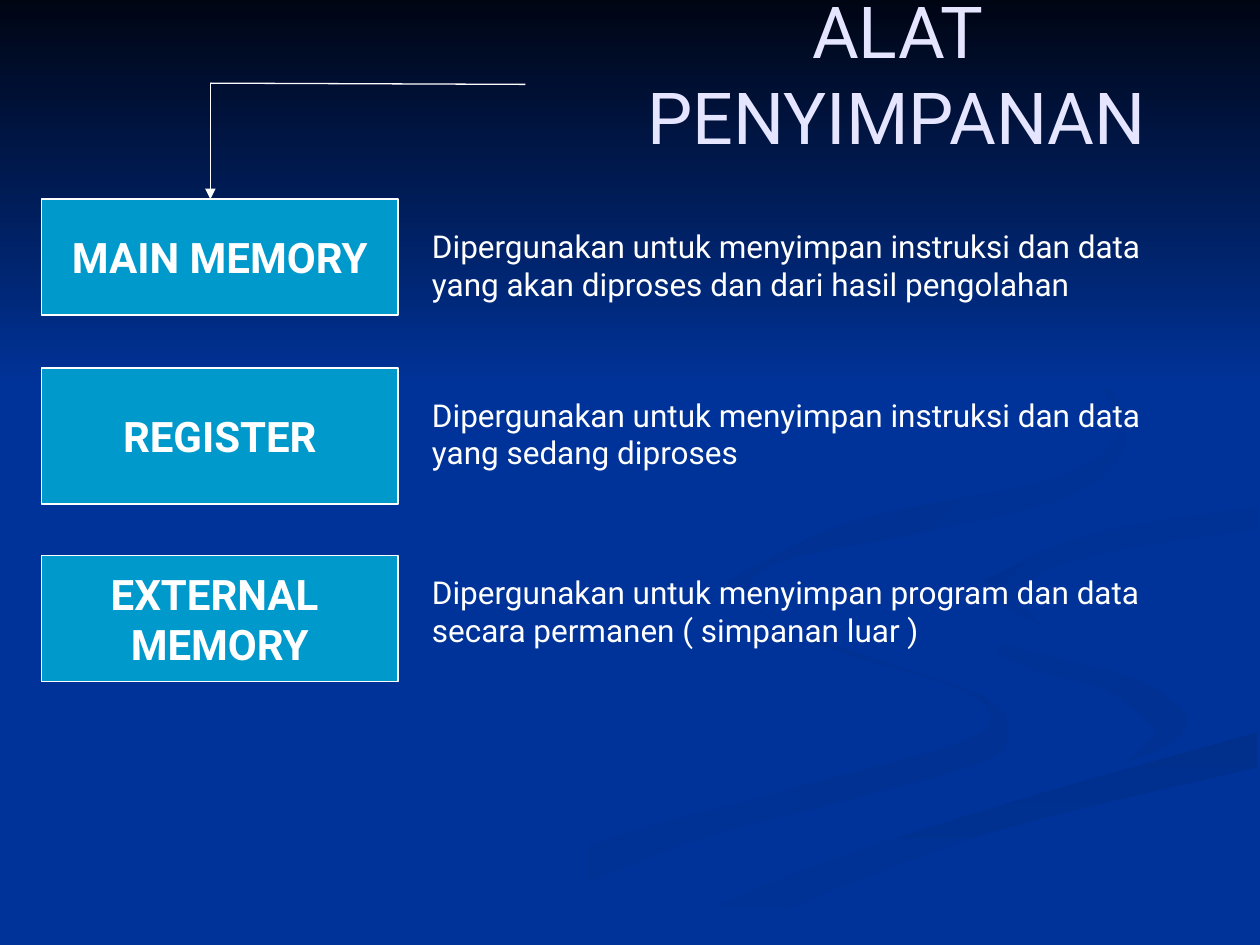
import pptx
import pptx.dml.color
import pptx.enum.shapes
import pptx.enum.text
import pptx.oxml
import pptx.oxml.ns
import pptx.util

Inches = pptx.util.Inches
ALIGN = pptx.enum.text.PP_ALIGN
ANCHOR = pptx.enum.text.MSO_ANCHOR

BLUE, WHITE, LAVENDER, CYAN, NIGHT = "003399", "FFFFFF", "E5E5FF", "0099CC", "000514"

CREST = [(7.24, 4.64), (7.58, 4.98), (8.3, 5.19), (9.05, 5.4), (9.43, 5.7)]
BANK = [(5.03, 7.49), (6.3, 6.93), (7.97, 6.38), (9.98, 5.81)]
COVE = [(9.98, 4.02), (8.65, 4.24), (7.81, 4.6)]

RIBBONS = [
    ([BLUE, "003193"], 0, [
        [(5.75, 4.59), (5.94, 4.85), (6.82, 5.19), (7.81, 5.53), (8, 5.81), (7.8, 6.05),
         (6.76, 6.34), (5.32, 6.74), (3.61, 7.49)],
        [(3, 7.49), (4.58, 6.74), (6.16, 6.29), (7.59, 5.9), (7.86, 5.66), (7.52, 5.43),
         (6.54, 5.13), (5.7, 4.72)]]),
    ([BLUE, "003193"], 45, [
        CREST + [(9.32, 5.89), (8.94, 6.05)],
        [(9.18, 5.81), (8.8, 5.49), (8.15, 5.3), (7.39, 4.94)]]),
    (["002F8C", BLUE], 90, [
        BANK, [(9.98, 6.09), (7.85, 6.61), (6.3, 7.19), (5.71, 7.49)]]),
    ([BLUE], 0, [
        CREST + [(9.02, 6.03), (7.43, 6.43), (5.73, 7.03), (4.77, 7.49)],
        BANK, [(9.98, 5.38), (9.04, 5.19), (8.04, 4.85), (7.81, 4.6)],
        COVE[::-1], [(9.98, 3.87), (8.08, 4.17), (7.42, 4.39), (7.24, 4.64)]]),
    (["003091", BLUE], 45, [
        COVE, [(7.91, 4.78), (8.26, 4.96)],
        [(8.05, 4.76), (8.28, 4.53), (8.96, 4.35), (9.98, 4.2)]]),
    (["002F8E", BLUE], 45, [
        [(6.22, 5), (5.93, 4.7), (6.24, 4.44), (7.39, 4.21), (8.55, 3.91), (8.94, 3.44),
         (8.64, 2.91), (7.62, 2.33)],
        [(8.46, 2.79), (8.89, 3.35), (8.42, 3.78), (6.76, 4.14), (5.77, 4.62)]]),
]

ROWS = [
    (1.58, 0.92, ["MAIN MEMORY"], 1.75, 6.25,
     "Dipergunakan untuk menyimpan instruksi dan data yang akan diproses dan dari hasil pengolahan"),
    (2.92, 1.08, ["REGISTER"], 3.09, 6.25,
     "Dipergunakan untuk menyimpan instruksi dan data yang sedang diproses"),
    (4.41, 1, ["EXTERNAL ", "MEMORY"], 4.5, 6.33,
     "Dipergunakan untuk menyimpan program dan data secara permanen ( simpanan luar )"),
]


def colour(value):
    return pptx.dml.color.RGBColor.from_string(value)


def smooth(points, steps=5):
    padded = [points[0], *points, points[-1]]
    curve = []
    for corners in zip(padded, padded[1:], padded[2:], padded[3:]):
        for step in range(steps):
            t = step / steps
            curve.append(tuple(
                b + t * (c - a) / 2 + t**2 * (2 * a - 5 * b + 4 * c - d) / 2
                + t**3 * (3 * b - a - 3 * c + d) / 2
                for a, b, c, d in zip(*corners)))
    return curve + [points[-1]]


def write(frame, lines, size=18, color=WHITE, bold=False, align=ALIGN.LEFT,
          anchor=ANCHOR.TOP, wrap=True):
    frame.word_wrap = wrap
    frame.vertical_anchor = anchor
    for index, line in enumerate(lines):
        para = frame.paragraphs[0] if index == 0 else frame.add_paragraph()
        para.alignment = align
        span = para.add_run()
        span.text = line
        span.font.name = "Roboto"
        span.font.size = pptx.util.Pt(size)
        span.font.bold = bold
        span.font.color.rgb = colour(color)


class Slide:
    """Holds the style and the current page, and draws each kind of element."""

    line_width = pptx.util.Pt(0.75)

    def __init__(self, deck):
        self.page = deck.slides.add_slide(deck.slide_layouts[6])
        self.shapes = self.page.shapes
        self.paint(self.page.background.fill, [BLUE])

    def paint(self, fill, colors, angle=0):
        if len(colors) == 1:
            fill.solid()
            fill.fore_color.rgb = colour(colors[0])
            return
        fill.gradient()
        fill.gradient_angle = (360 - angle) % 360
        for stop, color in zip(fill.gradient_stops, colors):
            stop.color.rgb = colour(color)

    def outline(self, line):
        line.color.rgb = colour(WHITE)
        line.width = self.line_width

    def finish(self, shape, colors, angle):
        shape.shadow.inherit = False
        self.paint(shape.fill, colors, angle)
        shape.line.fill.background()
        return shape

    def ribbon(self, colors, angle, edges):
        points = [(Inches(x), Inches(y)) for edge in edges for x, y in smooth(edge)]
        builder = self.shapes.build_freeform(*points[0])
        builder.add_line_segments(points[1:], close=True)
        self.finish(builder.convert_to_shape(), colors, angle)

    def rectangle(self, left, top, width, height, colors, angle=0):
        shape = self.shapes.add_shape(
            pptx.enum.shapes.MSO_SHAPE.RECTANGLE,
            Inches(left), Inches(top), Inches(width), Inches(height))
        return self.finish(shape, colors, angle)

    def label(self, left, top, width, height, lines):
        shape = self.rectangle(left, top, width, height, [CYAN])
        self.outline(shape.line)
        write(shape.text_frame, lines, size=24, bold=True, align=ALIGN.CENTER,
              anchor=ANCHOR.MIDDLE, wrap=False)

    def text(self, left, top, width, height, line, **style):
        box = self.shapes.add_textbox(Inches(left), Inches(top), Inches(width), Inches(height))
        write(box.text_frame, [line], **style)

    def connector(self, start, end, arrow=False):
        link = self.shapes.add_connector(
            pptx.enum.shapes.MSO_CONNECTOR.STRAIGHT, *map(Inches, start + end))
        self.outline(link.line)
        properties = link._element.spPr
        namespace = pptx.oxml.ns.nsdecls("a")
        if arrow:
            properties.find(pptx.oxml.ns.qn("a:ln")).append(
                pptx.oxml.parse_xml(f'<a:tailEnd {namespace} type="triangle"/>'))
        properties.append(pptx.oxml.parse_xml(f"<a:effectLst {namespace}/>"))


def main():
    deck = pptx.Presentation()
    deck.slide_width, deck.slide_height = Inches(10), Inches(7.5)
    slide = Slide(deck)
    for colors, angle, edges in RIBBONS:
        slide.ribbon(colors, angle, edges)
    slide.rectangle(0, 0, 10, 3.08, [NIGHT, BLUE], 90)
    slide.text(4.33, 0.08, 5.58, 1, "ALAT PENYIMPANAN", size=41, color=LAVENDER,
               align=ALIGN.CENTER, anchor=ANCHOR.MIDDLE)
    for top, height, name, text_top, text_width, description in ROWS:
        slide.label(0.33, top, 2.83, height, name)
        slide.text(3.33, text_top, text_width, 0.75, description)
    slide.connector((4.17, 0.67), (1.67, 0.66))
    slide.connector((1.67, 0.66), (1.67, 1.58), arrow=True)
    deck.save("out.pptx")


if __name__ == "__main__":
    main()
